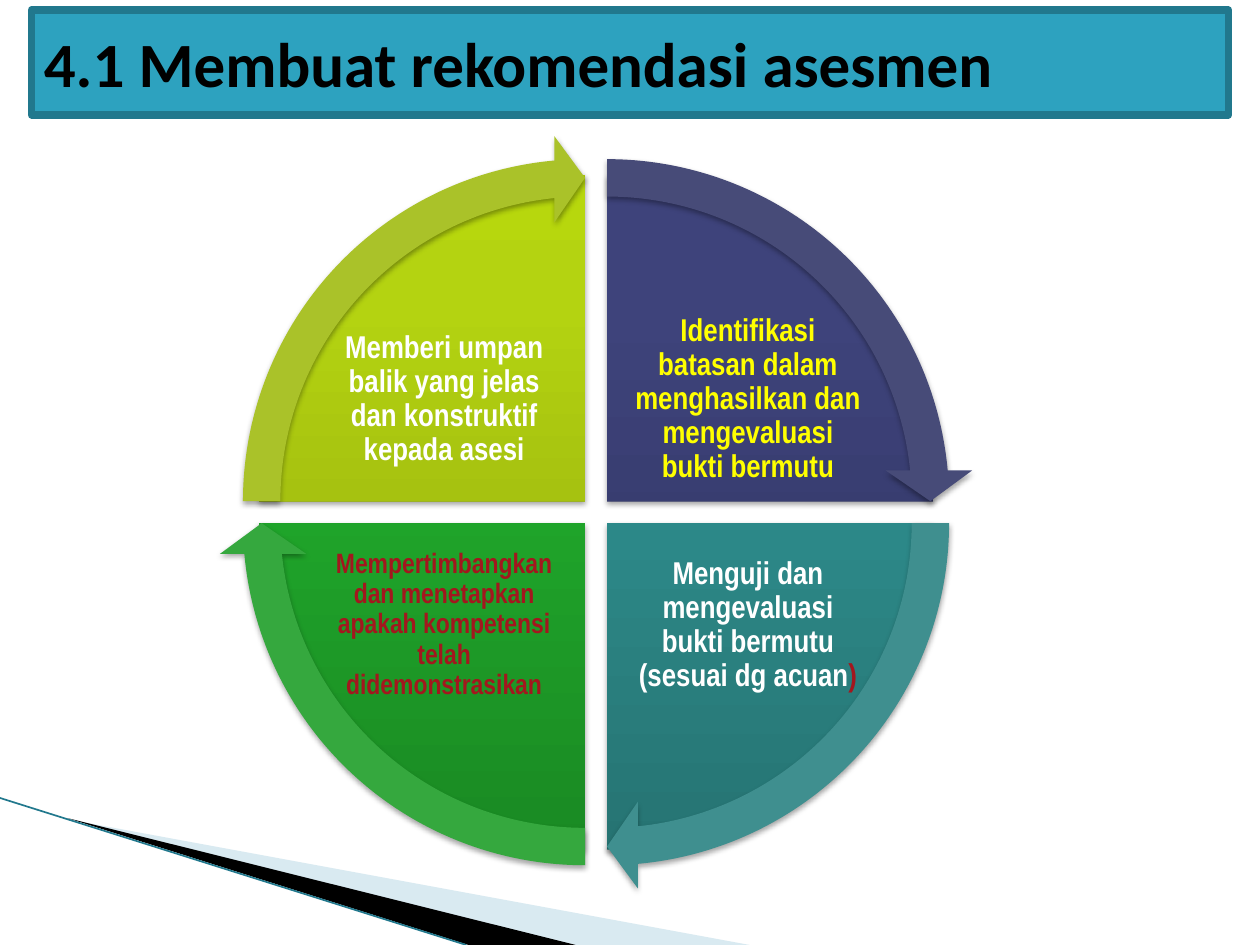
from copy import deepcopy
from dataclasses import dataclass

from lxml import etree
from pptx import Presentation
from pptx.dml.color import RGBColor
from pptx.enum.shapes import MSO_CONNECTOR, MSO_SHAPE
from pptx.enum.text import MSO_ANCHOR, PP_ALIGN
from pptx.oxml.ns import qn
from pptx.util import Pt

PIE, ARROW, RECTANGLE = MSO_SHAPE.PIE, MSO_SHAPE.CIRCULAR_ARROW, MSO_SHAPE.RECTANGLE
STRAIGHT = MSO_CONNECTOR.STRAIGHT
MIDDLE = MSO_ANCHOR.MIDDLE
LEFT, CENTER = PP_ALIGN.LEFT, PP_ALIGN.CENTER


@dataclass(frozen=True)
class Theme:
    title_font: str = "Calibri"
    label_font: str = "Arial Narrow"
    title_size: float = 36
    label_size: float = 18
    small_size: float = 16
    title_fill: str = "2DA2BF"
    title_line: str = "21788D"
    black: str = "000000"
    white: str = "FFFFFF"
    yellow: str = "FFFF00"
    red: str = "A3171E"
    swoosh: str = "A0CBDC"


THEME = Theme()
TITLE = "4.1 Membuat rekomendasi asesmen"
QUADRANTS = [
    {"side": (1, -1), "start": 162, "size": THEME.label_size, "inset": 2.2,
     "stops": ("2F335F", "3E437B", "3D427D"), "arrow": "474B78",
     "runs": [("Identifikasi batasan dalam menghasilkan dan mengevaluasi bukti bermutu",
               THEME.yellow)]},
    {"side": (1, 1), "start": 0, "size": THEME.label_size, "inset": 2.2,
     "stops": ("267473", "319696", "309999"), "arrow": "3F8F8F",
     "runs": [("Menguji dan mengevaluasi bukti bermutu (sesuai dg acuan", THEME.white),
              (")", THEME.red)]},
    {"side": (-1, 1), "start": 54, "size": THEME.small_size, "inset": 1.6,
     "stops": ("1A8A23", "22B32E", "20B72C"), "arrow": "35A83E",
     "runs": [("Mempertimbangkan dan menetapkan apakah kompetensi telah didemonstrasikan",
               THEME.red)]},
    {"side": (-1, -1), "start": 108, "size": THEME.label_size, "inset": 2.2,
     "stops": ("8BA20D", "B4D311", "B7D70D"), "arrow": "AAC229",
     "runs": [("Memberi umpan balik yang jelas dan konstruktif kepada asesi",
               THEME.white)]},
]
SWOOSHES = [
    ([(39.6, 468.4), (428.4, 540), (328.3, 540)], THEME.swoosh, 40),
    ([(38.5, 467.5), (329, 540), (267.8, 540)], THEME.black, 100),
]
SWOOSH_EDGE = (0, 456, 266.5, 540)

STOP_POSITIONS = (0, 0.8, 1)
MIDDLE_X, MIDDLE_Y = 340.6, 292.7
GAP = 6.3
PIE_SIZE, ARROW_SIZE = 373, 419
LABEL_OFFSET = (86.8, 64.4)
LABEL_SIZE = (137.5, 102.2)
QUARTER, FULL_TURN = 54, 216


def rgb(color):
    """Return the colour object for a hex string."""
    return RGBColor.from_string(color)


def points(*values):
    """Turn plain numbers into point lengths."""
    return [Pt(round(value, 2)) for value in values]


def centered(side, offset, size):
    """Return the box of a given size, moved from the wheel's middle."""
    return points(MIDDLE_X + side[0] * offset[0] - size[0] / 2,
                  MIDDLE_Y + side[1] * offset[1] - size[1] / 2, *size)


def write(shape, runs, font, size, alignment, spacing=1.0):
    """Fill a shape with one bold paragraph of coloured runs."""
    frame = shape.text_frame
    frame.word_wrap = True
    frame.vertical_anchor = MIDDLE
    paragraph = frame.paragraphs[0]
    paragraph.alignment = alignment
    paragraph.line_spacing = spacing
    for text, color in runs:
        run = paragraph.add_run()
        run.text = text
        run.font.name, run.font.size, run.font.bold = font, Pt(size), True
        run.font.color.rgb = rgb(color)


def add_shadow(shape):
    """Give a shape a soft shadow straight below it."""
    shape.shadow.inherit = False
    effects = shape._element.spPr.find(qn("a:effectLst"))
    shadow = etree.SubElement(effects, qn("a:outerShdw"), blurRad=str(Pt(3.1)),
                              dist=str(Pt(1.8)), dir="5400000", rotWithShape="0")
    color = etree.SubElement(shadow, qn("a:srgbClr"), val=THEME.black)
    etree.SubElement(color, qn("a:alpha"), val="35000")


def add_wheel_part(slide, kind, side, size, adjustments):
    """Add one outline-free, shadowed part of the wheel."""
    shape = slide.shapes.add_shape(kind, *centered(side, (GAP, GAP), (size, size)))
    for index, value in enumerate(adjustments):
        shape.adjustments[index] = value
    shape.line.fill.background()
    add_shadow(shape)
    return shape


def add_sector(slide, quadrant):
    """Add a gradient sector and its label."""
    side, start = quadrant["side"], quadrant["start"]
    sector = add_wheel_part(slide, PIE, side, PIE_SIZE,
                            (start, (start + QUARTER) % FULL_TURN))
    sector.fill.gradient()
    sector.fill.gradient_angle = 90
    stop_list = sector._element.spPr.find(qn("a:gradFill")).find(qn("a:gsLst"))
    stop_list.insert(1, deepcopy(stop_list[0]))
    for stop, color, position in zip(sector.fill.gradient_stops, quadrant["stops"],
                                     STOP_POSITIONS):
        stop.color.rgb = rgb(color)
        stop.position = position
    label = slide.shapes.add_textbox(*centered(side, LABEL_OFFSET, LABEL_SIZE))
    frame = label.text_frame
    frame.margin_left = frame.margin_right = Pt(quadrant["inset"])
    frame.margin_top = frame.margin_bottom = Pt(quadrant["inset"])
    write(label, quadrant["runs"], THEME.label_font, quadrant["size"], CENTER, 0.9)


def add_arrow(slide, quadrant):
    """Add the curved arrow around a sector."""
    start = quadrant["start"]
    arrow = add_wheel_part(slide, ARROW, quadrant["side"], ARROW_SIZE,
                           (0.051, 3.275, start + 50.725, start, 0.059))
    arrow.fill.solid()
    arrow.fill.fore_color.rgb = rgb(quadrant["arrow"])


def add_swooshes(slide):
    """Add the corner decoration."""
    for corners, color, opacity in SWOOSHES:
        first, *others = [tuple(points(*corner)) for corner in corners]
        builder = slide.shapes.build_freeform(*first)
        builder.add_line_segments(others)
        shape = builder.convert_to_shape()
        shape.fill.solid()
        shape.fill.fore_color.rgb = rgb(color)
        shape.line.fill.background()
        shape.shadow.inherit = False
        fill_color = shape._element.spPr.find(qn("a:solidFill"))[0]
        etree.SubElement(fill_color, qn("a:alpha"), val=str(opacity * 1000))
    edge = slide.shapes.add_connector(STRAIGHT, *points(*SWOOSH_EDGE))
    edge.line.color.rgb = rgb(THEME.title_line)
    edge.line.width = Pt(0.95)
    etree.SubElement(edge._element.spPr, qn("a:effectLst"))


def add_title(slide):
    """Add the title bar."""
    bar = slide.shapes.add_shape(RECTANGLE, *points(18, 5.8, 684, 59.8))
    bar.fill.solid()
    bar.fill.fore_color.rgb = rgb(THEME.title_fill)
    bar.line.color.rgb = rgb(THEME.title_line)
    bar.line.width = Pt(4.33)
    bar.shadow.inherit = False
    write(bar, [(TITLE, THEME.black)], THEME.title_font, THEME.title_size, LEFT)


def main():
    """Build and save the slide."""
    presentation = Presentation()
    presentation.slide_width, presentation.slide_height = Pt(720), Pt(540)
    slide = presentation.slides.add_slide(presentation.slide_layouts[6])
    add_swooshes(slide)
    for add_part in (add_sector, add_arrow):
        for quadrant in QUADRANTS:
            add_part(slide, quadrant)
    add_title(slide)
    presentation.save("out.pptx")


if __name__ == "__main__":
    main()
